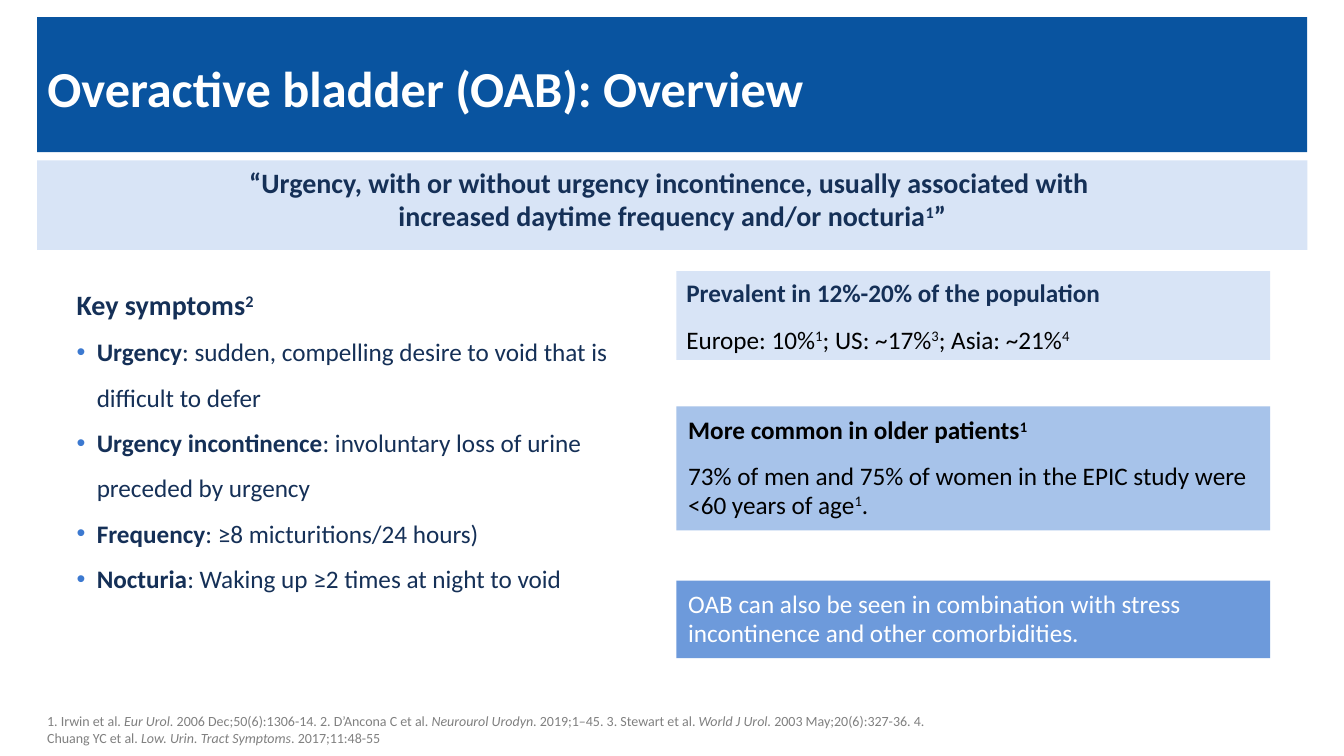
from pptx import Presentation
from pptx.dml.color import RGBColor
from pptx.enum.shapes import MSO_SHAPE
from pptx.enum.text import MSO_ANCHOR, MSO_AUTO_SIZE, PP_ALIGN
from pptx.oxml.ns import qn
from pptx.util import Pt
from lxml.etree import SubElement

BLUE = RGBColor(0x09, 0x54, 0xA0)
PALE = RGBColor(0xD8, 0xE4, 0xF6)
SKY = RGBColor(0x8A, 0xAF, 0xE3)
MID = RGBColor(0x3D, 0x79, 0xD0)
NAVY = RGBColor(0x15, 0x30, 0x57)
GREY = RGBColor(0x80, 0x80, 0x80)
BLACK = RGBColor(0, 0, 0)
WHITE = RGBColor(255, 255, 255)
DOT = "3C79D0"
FONT = "Calibri"
LEFT, WIDE = 26.6, 907.2


def place(shape, box):
    shape.left, shape.top, shape.width, shape.height = [Pt(n) for n in box]


def set_frame(shape, inset=(7.2, 3.6), anchor=MSO_ANCHOR.TOP):
    frame = shape.text_frame
    frame.word_wrap = True
    frame.auto_size = MSO_AUTO_SIZE.NONE
    frame.vertical_anchor = anchor
    frame.margin_left = frame.margin_right = Pt(inset[0])
    frame.margin_top = frame.margin_bottom = Pt(inset[1])
    return frame


def add_para(frame, first, align=PP_ALIGN.LEFT, before=0, line=1.0,
             left=0, bullet=False):
    para = frame.paragraphs[0] if first else frame.add_paragraph()
    para.alignment = align
    para.space_before = Pt(0 if first else before)
    para.line_spacing = line
    props = para._p.get_or_add_pPr()
    props.set("marL", str(Pt(left)))
    props.set("indent", str(Pt(-left if bullet else 0)))
    if bullet:
        tint = SubElement(props, qn("a:buClr"))
        SubElement(tint, qn("a:srgbClr"), val=DOT)
        SubElement(props, qn("a:buFont"), typeface="Arial")
        SubElement(props, qn("a:buChar"), char="•")
    else:
        SubElement(props, qn("a:buNone"))
    return para


def add_runs(para, parts, size, color):
    """Each part is (text, marks): b bold, i italic, s superscript."""
    for text, marks in parts:
        run = para.add_run()
        run.text = text
        font = run.font
        font.name, font.size = FONT, Pt(size)
        font.color.rgb = color
        font.bold, font.italic = "b" in marks, "i" in marks
        if "s" in marks:
            run._r.get_or_add_rPr().set("baseline", "30000")


def add_rect(slide, box, color, alpha=None):
    rect = slide.shapes.add_shape(MSO_SHAPE.RECTANGLE, *[Pt(n) for n in box])
    rect.shadow.inherit = False
    rect.fill.solid()
    rect.fill.fore_color.rgb = color
    rect.line.fill.background()
    if alpha:
        tone = rect._element.spPr.find(qn("a:solidFill"))[0]
        SubElement(tone, qn("a:alpha"), val=str(alpha * 1000))
    return rect


def add_title(slide, box):
    # Band goes behind the title
    band = add_rect(slide, box, BLUE)
    slide.shapes._spTree.insert(2, band._element)
    title = slide.shapes.title
    left, top, _, _ = box
    place(title, (left, top + 23.1, 843.8, 54))
    para = add_para(set_frame(title, anchor=MSO_ANCHOR.MIDDLE), True)
    add_runs(para, [("Overactive bladder (OAB): Overview", "b")], 36, WHITE)


def add_quote(slide, box):
    quote = slide.placeholders[1]
    place(quote, box)
    quote.fill.solid()
    quote.fill.fore_color.rgb = PALE
    para = add_para(set_frame(quote), True, PP_ALIGN.CENTER)
    add_runs(para, [("“Urgency, with or without urgency incontinence, "
                     "usually associated with ", "b")], 20, NAVY)
    para.add_line_break()
    add_runs(para, [("increased daytime frequency and/or nocturia", "b"),
                    ("1", "bs"), ("”", "b")], 20, NAVY)


def add_list(slide, box):
    body = slide.placeholders[2]
    place(body, box)
    body.fill.solid()
    body.fill.fore_color.rgb = WHITE
    frame = set_frame(body, (0, 0))
    head = add_para(frame, True, line=1.5)
    add_runs(head, [("Key symptoms", "b"), ("2", "bs")], 20, NAVY)
    signs = [
        ("Urgency", ": sudden, compelling desire to void that is difficult to defer"),
        ("Urgency incontinence", ": involuntary loss of urine preceded by urgency"),
        ("Frequency", ": ≥8 micturitions/24 hours)"),
        ("Nocturia", ": Waking up ≥2 times at night to void"),
    ]
    for name, text in signs:
        para = add_para(frame, False, line=1.5, left=14.4, bullet=True)
        add_runs(para, [(name, "b"), (text, "")], 18, NAVY)


def add_card(slide, box, fill, alpha, inset, line, left, paras):
    card = add_rect(slide, box, fill, alpha)
    frame = set_frame(card, inset, MSO_ANCHOR.MIDDLE)
    for i, (color, parts) in enumerate(paras):
        para = add_para(frame, i == 0, before=12, line=line, left=left)
        add_runs(para, parts, 18, color)


def add_cards(slide, box):
    left, top, width, _ = box
    deep = ((7.2, 7.2), 0.95, 1.4)
    cards = [
        (0, 63.4, PALE, None, ((7.2, 3.6), 1.0, 0), [
            (NAVY, [("Prevalent in 12%-20% of the population", "b")]),
            (BLACK, [("Europe: 10%", ""), ("1", "s"), ("; US: ~17%", ""),
                     ("3", "s"), ("; Asia: ~21%", ""), ("4", "s")])]),
        (96.5, 88.6, SKY, 75, deep, [
            (BLACK, [("More common in older patients", "b"), ("1", "bs")]),
            (BLACK, [("73% of men and 75% of women in the EPIC study were "
                      "<60 years of age", ""), ("1", "s"), (".", "")])]),
        (221, 55.4, MID, 75, deep, [
            (WHITE, [("OAB can also be seen in combination with stress "
                      "incontinence and other comorbidities.", "")])]),
    ]
    for drop, height, fill, alpha, style, paras in cards:
        spot = (left, top + drop, width, height)
        add_card(slide, spot, fill, alpha, *style, paras)


def add_refs(slide, box):
    refs = slide.shapes.add_textbox(*[Pt(n) for n in box])
    para = add_para(set_frame(refs), True)
    add_runs(para, [
        ("1. Irwin et al. ", ""), ("Eur Urol. ", "i"),
        ("2006 Dec;50(6):1306-14. 2. D’Ancona C et al. ", ""),
        ("Neurourol Urodyn", "i"),
        (". 2019;1–45. 3. Stewart et al. ", ""), ("World J Urol. ", "i"),
        ("2003 May;20(6):327-36. 4. Chuang YC et al. ", ""),
        ("Low. Urin. Tract Symptoms", "i"), (". 2017;11:48-55", ""),
    ], 10, GREY)


def main():
    deck = Presentation()
    deck.slide_width, deck.slide_height = Pt(960), Pt(540)
    slide = deck.slides.add_slide(deck.slide_layouts[3])
    add_title(slide, (LEFT, 12.2, WIDE, 96.5))
    add_quote(slide, (LEFT, 114.5, WIDE, 64))
    add_list(slide, (54.7, 193.7, 385.2, 293.8))
    add_cards(slide, (483.1, 193.7, 424.1, 276.4))
    add_refs(slide, (LEFT, 505.4, 640.8, 28.8))
    deck.save("out.pptx")


if __name__ == "__main__":
    main()
